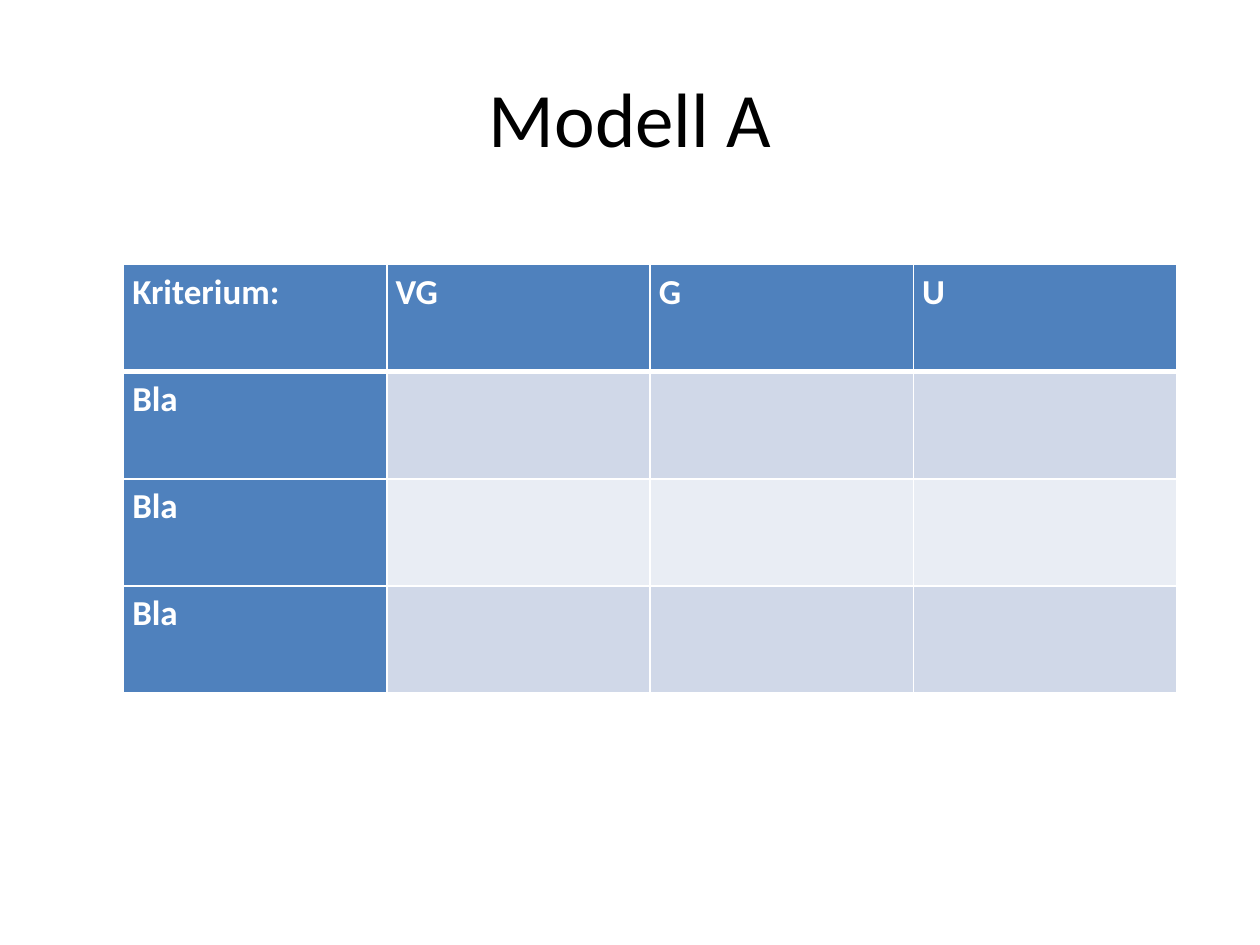
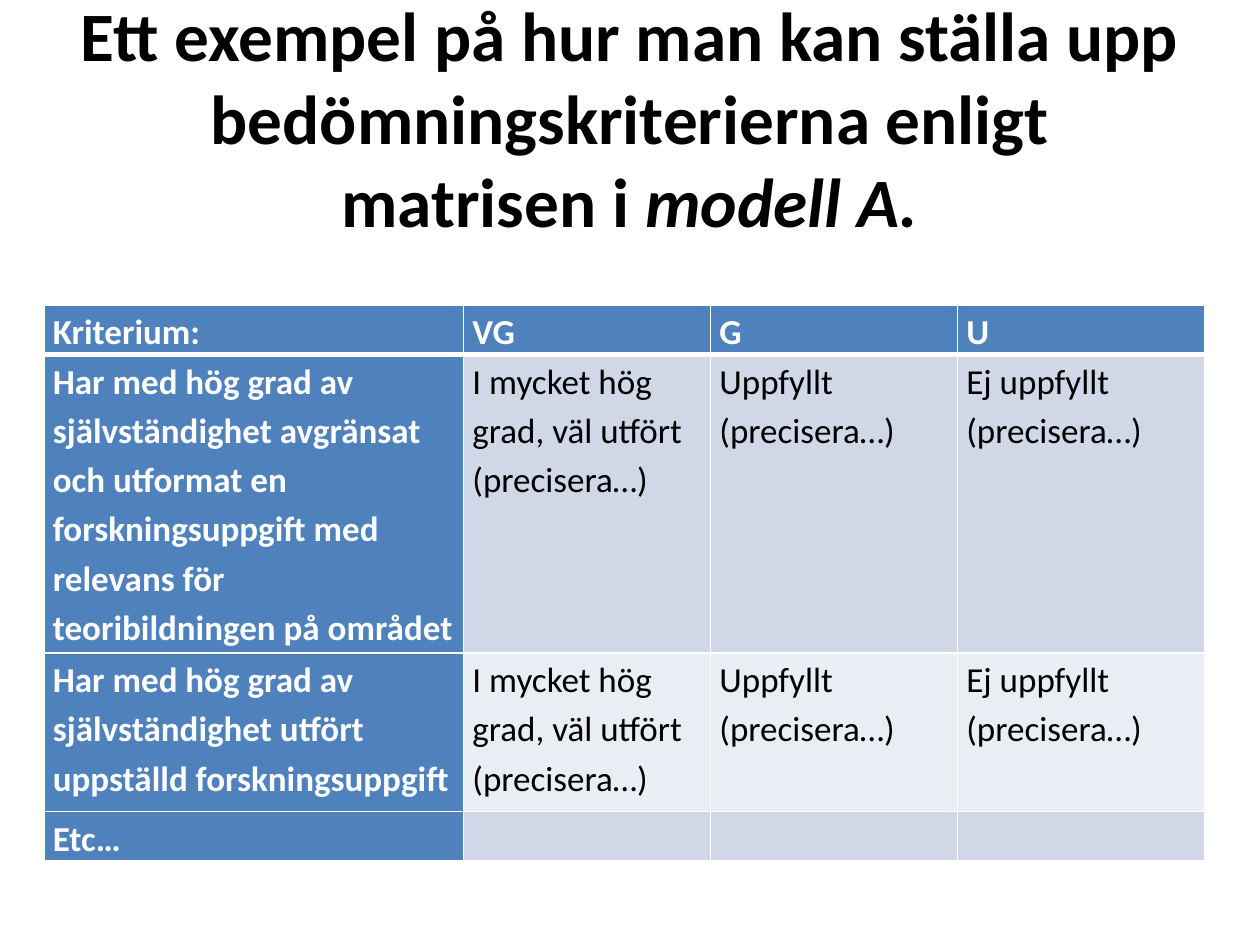
from dataclasses import dataclass

from lxml import etree
from pptx import Presentation
from pptx.dml.color import RGBColor
from pptx.enum.text import MSO_ANCHOR, MSO_AUTO_SIZE, PP_ALIGN
from pptx.oxml.ns import qn
from pptx.util import Inches, Pt

MIDDLE, TOP = MSO_ANCHOR.MIDDLE, MSO_ANCHOR.TOP
NO_FIT = MSO_AUTO_SIZE.NONE
CENTER = PP_ALIGN.CENTER
TITLE_ONLY = 5

# Shared look
FONT = "Calibri"
BLACK, WHITE = "000000", "FFFFFF"
HEAD_FILL = "4F81BD"
BAND_FILLS = ("D0D8E8", "E9EDF4")
TITLE_BOX = (0.5, 0.3, 9, 1.25)
TITLE_FRAME = {"word_wrap": True, "auto_size": NO_FIT, "vertical_anchor": MIDDLE}
CELL_FORMAT = {
    "margin_left": Inches(0.07), "margin_right": Inches(0.07),
    "margin_top": 0, "margin_bottom": 0, "vertical_anchor": TOP,
}
CELL_SIZE = 20
LINE_SPACING = 1.15
BORDER, HEAD_BORDER = 1, 3


@dataclass
class TitleRun:
    text: str
    bold: bool = False
    italic: bool = False


@dataclass
class Matrix:
    title: list[TitleRun]
    title_size: float
    left: float
    top: float
    col_widths: list[float]
    row_heights: list[float]
    rows: list[list[str]]


GRADES = ["Kriterium:", "VG", "G", "U"]
LEVELS = ["I mycket hög grad, väl utfört (precisera…)",
          "Uppfyllt (precisera…)", "Ej uppfyllt (precisera…)"]
EMPTY = [""] * 3

MATRICES = [
    Matrix(
        title=[TitleRun("Modell A")], title_size=44,
        left=0.98, top=2.1,
        col_widths=[2.09] * 4, row_heights=[0.85] * 4,
        rows=[GRADES] + [["Bla", *EMPTY]] * 3,
    ),
    Matrix(
        title=[
            TitleRun("Ett exempel på hur man kan ställa upp "
                     "bedömningskriterierna enligt matrisen i ", bold=True),
            TitleRun("modell A.", bold=True, italic=True),
        ],
        title_size=39.6,
        left=0.35, top=2.42,
        col_widths=[3.33] + [1.96] * 3, row_heights=[0.36, 2.37, 1.26, 0.36],
        rows=[
            GRADES,
            ["Har med hög grad av självständighet avgränsat och utformat en "
             "forskningsuppgift med relevans för teoribildningen på området", *LEVELS],
            ["Har med hög grad av självständighet utfört uppställd "
             "forskningsuppgift", *LEVELS],
            ["Etc…", *EMPTY],
        ],
    ),
]


def rgb(color: str) -> RGBColor:
    return RGBColor.from_string(color)


def apply(target, values: dict) -> None:
    for name, value in values.items():
        setattr(target, name, value)


def add_run(p, text: str, size: float, color: str, bold: bool, italic: bool = False) -> None:
    r = p.add_run()
    r.text = text
    apply(r.font, {"name": FONT, "size": Pt(size), "bold": bold, "italic": italic})
    r.font.color.rgb = rgb(color)


def add_title(slide, matrix: Matrix) -> None:
    sp = slide.shapes.title
    apply(sp, dict(zip(("left", "top", "width", "height"), map(Inches, TITLE_BOX))))
    tf = sp.text_frame
    apply(tf, TITLE_FRAME)
    p = tf.paragraphs[0]
    p.alignment = CENTER
    for run in matrix.title:
        add_run(p, run.text, matrix.title_size, BLACK, run.bold, run.italic)


def set_borders(cell, widths: dict[str, float]) -> None:
    """Border lines come before the fill in the cell properties."""
    tc_pr = cell._tc.get_or_add_tcPr()
    for i, (side, width) in enumerate(widths.items()):
        ln = etree.Element(qn(f"a:ln{side}"), w=str(Pt(width)))
        fill = etree.SubElement(ln, qn("a:solidFill"))
        etree.SubElement(fill, qn("a:srgbClr"), val=WHITE)
        tc_pr.insert(i, ln)


def format_cell(cell, text: str, row: int, col: int) -> None:
    is_head = row == 0 or col == 0
    apply(cell, CELL_FORMAT)
    cell.fill.solid()
    cell.fill.fore_color.rgb = rgb(HEAD_FILL if is_head else BAND_FILLS[(row - 1) % 2])
    set_borders(cell, {
        "L": BORDER, "R": BORDER,
        "T": HEAD_BORDER if row == 1 else BORDER,
        "B": HEAD_BORDER if row == 0 else BORDER,
    })
    p = cell.text_frame.paragraphs[0]
    p.line_spacing = LINE_SPACING
    if text:
        add_run(p, text, CELL_SIZE, WHITE if is_head else BLACK, is_head)


def add_matrix(slide, matrix: Matrix) -> None:
    widths, heights = matrix.col_widths, matrix.row_heights
    table = slide.shapes.add_table(
        len(heights), len(widths), Inches(matrix.left), Inches(matrix.top),
        Inches(sum(widths)), Inches(sum(heights))).table
    for column, width in zip(table.columns, widths):
        column.width = Inches(width)
    for i, (height, texts) in enumerate(zip(heights, matrix.rows)):
        table.rows[i].height = Inches(height)
        for j, text in enumerate(texts):
            format_cell(table.cell(i, j), text, i, j)


def main() -> None:
    prs = Presentation()
    prs.slide_width, prs.slide_height = Inches(10), Inches(7.5)
    for matrix in MATRICES:
        slide = prs.slides.add_slide(prs.slide_layouts[TITLE_ONLY])
        add_title(slide, matrix)
        add_matrix(slide, matrix)
    prs.save("out.pptx")


if __name__ == "__main__":
    main()
